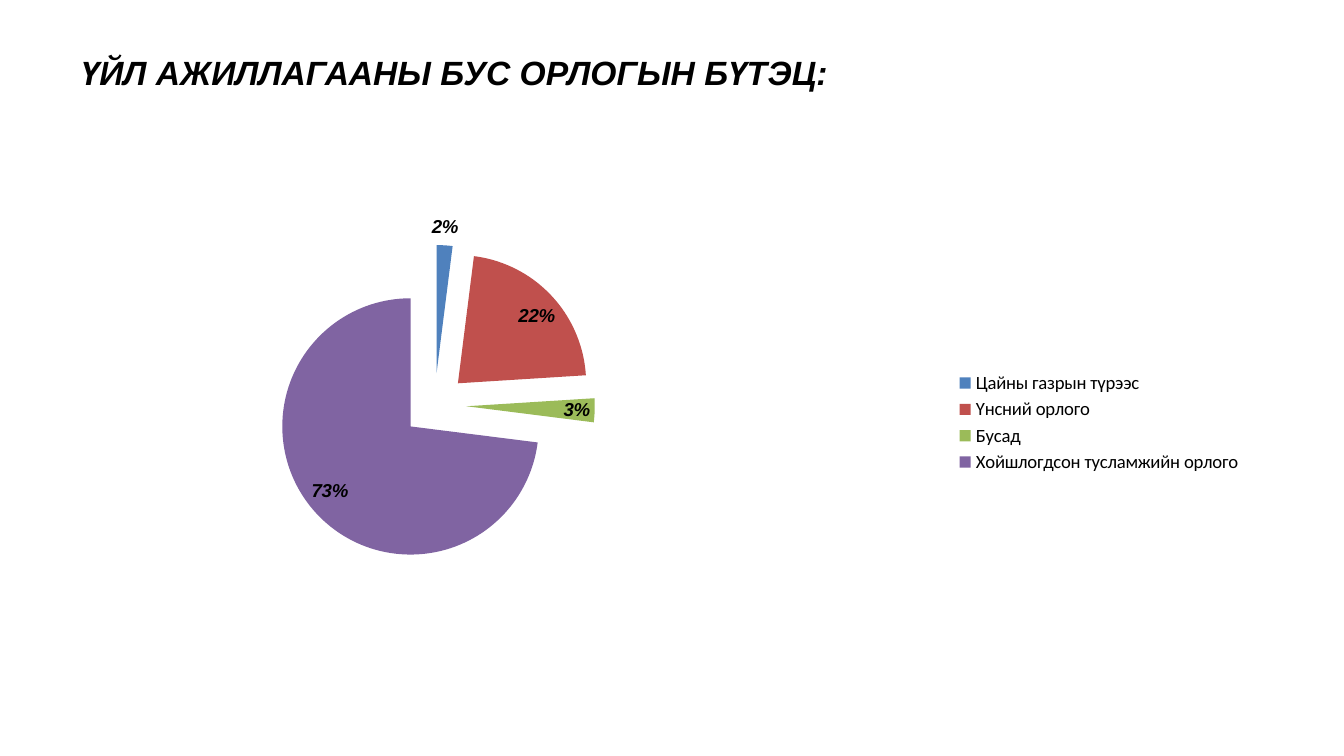
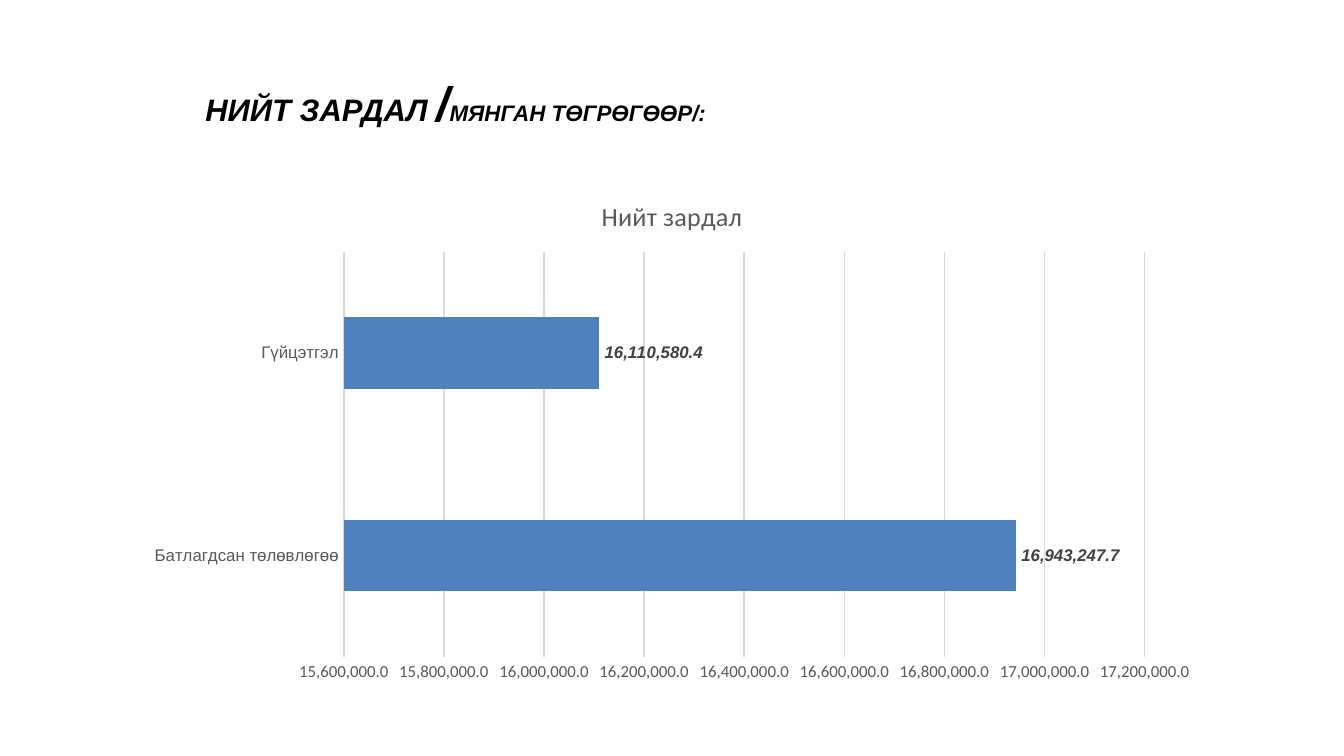
from lxml import etree
from pptx import Presentation
from pptx.chart.data import CategoryChartData
from pptx.dml.color import RGBColor
from pptx.enum import chart as charts, text
from pptx.oxml import ns
from pptx.util import Pt

BLACK, GREY, DARK, RULE = "000000", "595959", "404040", "D9D9D9"
BLUE, RED, GREEN, PURPLE = "4F81BD", "C0504D", "9BBB59", "8064A2"


def colour(value):
    """Turn a hex string into an RGB colour."""
    return RGBColor.from_string(value)


def apply(target, values):
    """Set every attribute named in a dict of format values."""
    for name, value in values.items():
        setattr(target, name, value)


def add_value(parent, tag, value):
    """Append a chart XML element that carries one value."""
    etree.SubElement(parent, ns.qn(f"c:{tag}")).set("val", str(value))


class Deck:
    """Hold the shared style and the current slide."""

    heading = {"name": "Arial", "bold": True, "italic": True}

    def __init__(self, width, height):
        """Start an empty presentation of the given size."""
        self.show = Presentation()
        apply(self.show, {"slide_width": Pt(width), "slide_height": Pt(height)})

    def style(self, font, size, shade, **values):
        """Format a font with a size, a colour and further values."""
        apply(font, {"size": Pt(size), **values})
        font.color.rgb = colour(shade)

    def add_slide(self):
        """Open a new blank slide."""
        self.slide = self.show.slides.add_slide(self.show.slide_layouts[6])

    def add_title(self, top, height, *pieces):
        """Write a centred heading from (words, size) pieces."""
        frame = self.slide.shapes.add_textbox(
            Pt(11.5), Pt(top), Pt(468.7), Pt(height)).text_frame
        apply(frame, {"word_wrap": True, "margin_top": Pt(5.5),
                      "vertical_anchor": text.MSO_ANCHOR.TOP})
        line = frame.paragraphs[0]
        line.alignment = text.PP_ALIGN.CENTER
        for words, size in pieces:
            run = line.add_run()
            run.text = words
            self.style(run.font, size, BLACK, **self.heading)

    def add_chart(self, kind, box, name, values):
        """Place a chart with one series and the shared font."""
        data = CategoryChartData()
        data.categories = list(values)
        data.add_series(name, list(values.values()))
        chart = self.slide.shapes.add_chart(kind, *map(Pt, box), data).chart
        self.style(chart.font, 10, BLACK, name="Calibri")
        apply(chart, {"has_legend": False, "has_title": False})
        return chart

    def add_labels(self, plot, size, shade, **values):
        """Show data labels in the heading style."""
        plot.has_data_labels = True
        labels = plot.data_labels
        apply(labels, {"number_format_is_linked": False, **values})
        self.style(labels.font, size, shade, **self.heading)

    def add_pie(self, box, name, values, shades, area, explosion):
        """Draw an exploded pie with a legend on the right."""
        chart = self.add_chart(charts.XL_CHART_TYPE.PIE, box, name, values)
        chart.has_legend = True
        apply(chart.legend, {"position": charts.XL_LEGEND_POSITION.RIGHT,
                             "include_in_layout": False})
        plot = chart.plots[0]
        plot.vary_by_categories = True
        series = plot.series[0]
        gap = etree.Element(ns.qn("c:explosion"), val=str(explosion))
        series._element.find(ns.qn("c:tx")).addnext(gap)
        for index, shade in enumerate(shades):
            fill = series.points[index].format.fill
            fill.solid()
            fill.fore_color.rgb = colour(shade)
        self.add_labels(plot, 10, BLACK, show_percentage=True, show_value=False,
                        number_format="0%",
                        position=charts.XL_LABEL_POSITION.BEST_FIT)
        self.set_area(chart, area)

    def set_area(self, chart, area):
        """Fix the inner plot area as fractions of the chart."""
        plot_area = chart._chartSpace.find(".//" + ns.qn("c:plotArea"))
        for old in plot_area.findall(ns.qn("c:layout")):
            plot_area.remove(old)
        layout = etree.Element(ns.qn("c:layout"))
        plot_area.insert(0, layout)
        manual = etree.SubElement(layout, ns.qn("c:manualLayout"))
        add_value(manual, "layoutTarget", "inner")
        for side in "xy":
            add_value(manual, f"{side}Mode", "edge")
        for side, share in zip("xywh", area):
            add_value(manual, side, share)

    def add_bars(self, box, name, values, scale, number_format):
        """Draw titled horizontal bars with value labels."""
        chart = self.add_chart(charts.XL_CHART_TYPE.BAR_CLUSTERED, box, name, values)
        chart.has_title = True
        caption = chart.chart_title.text_frame
        caption.text = name
        self.style(caption.paragraphs[0].runs[0].font, 14, GREY,
                   name="Calibri", bold=False)
        plot = chart.plots[0]
        apply(plot, {"gap_width": 182, "vary_by_categories": False})
        fill = plot.series[0].format.fill
        fill.solid()
        fill.fore_color.rgb = colour(BLUE)
        self.add_labels(plot, 9, DARK, show_value=True, number_format=number_format,
                        position=charts.XL_LABEL_POSITION.OUTSIDE_END)
        names, amounts = chart.category_axis, chart.value_axis
        for axis, face in ((names, "Arial"), (amounts, "Calibri")):
            apply(axis, {"major_tick_mark": charts.XL_TICK_MARK.NONE,
                         "minor_tick_mark": charts.XL_TICK_MARK.NONE})
            self.style(axis.tick_labels.font, 9, GREY, name=face)
        apply(amounts, {"has_major_gridlines": True, **scale})
        apply(amounts.tick_labels, {"number_format": number_format,
                                    "number_format_is_linked": False})
        amounts.format.line.fill.background()
        for line in (names.format.line, amounts.major_gridlines.format.line):
            line.width = Pt(0.75)
            line.color.rgb = colour(RULE)


def main():
    """Build both slides and save the file."""
    deck = Deck(720, 405)

    deck.add_slide()
    deck.add_title(22.3, 48.2, ("ҮЙЛ АЖИЛЛАГААНЫ БУС ОРЛОГЫН БҮТЭЦ: ", 18))
    income = {"Цайны газрын түрээс": 2, "Үнсний орлого": 22,
              "Бусад": 3, "Хойшлогдсон тусламжийн орлого": 73}
    deck.add_pie((35.3, 94.3, 637.2, 264.2), "Series 1", income,
                 (BLUE, RED, GREEN, PURPLE), (0.04, 0.14, 0.54, 0.65), 25)

    deck.add_slide()
    deck.add_title(33.8, 36, ("НИЙТ ЗАРДАЛ ", 16.6), ("/", 25.9),
                   ("МЯНГАН ТӨГРӨГӨӨР/: ", 12))
    spending = {"Батлагдсан төлөвлөгөө": 16943247.7, "Гүйцэтгэл": 16110580.4}
    scale = {"minimum_scale": 15600000, "maximum_scale": 17200000,
             "major_unit": 200000}
    deck.add_bars((71.3, 94.3, 577.4, 276.5), "Нийт зардал", spending,
                  scale, "#,##0.0")

    deck.show.save("out.pptx")


if __name__ == "__main__":
    main()
